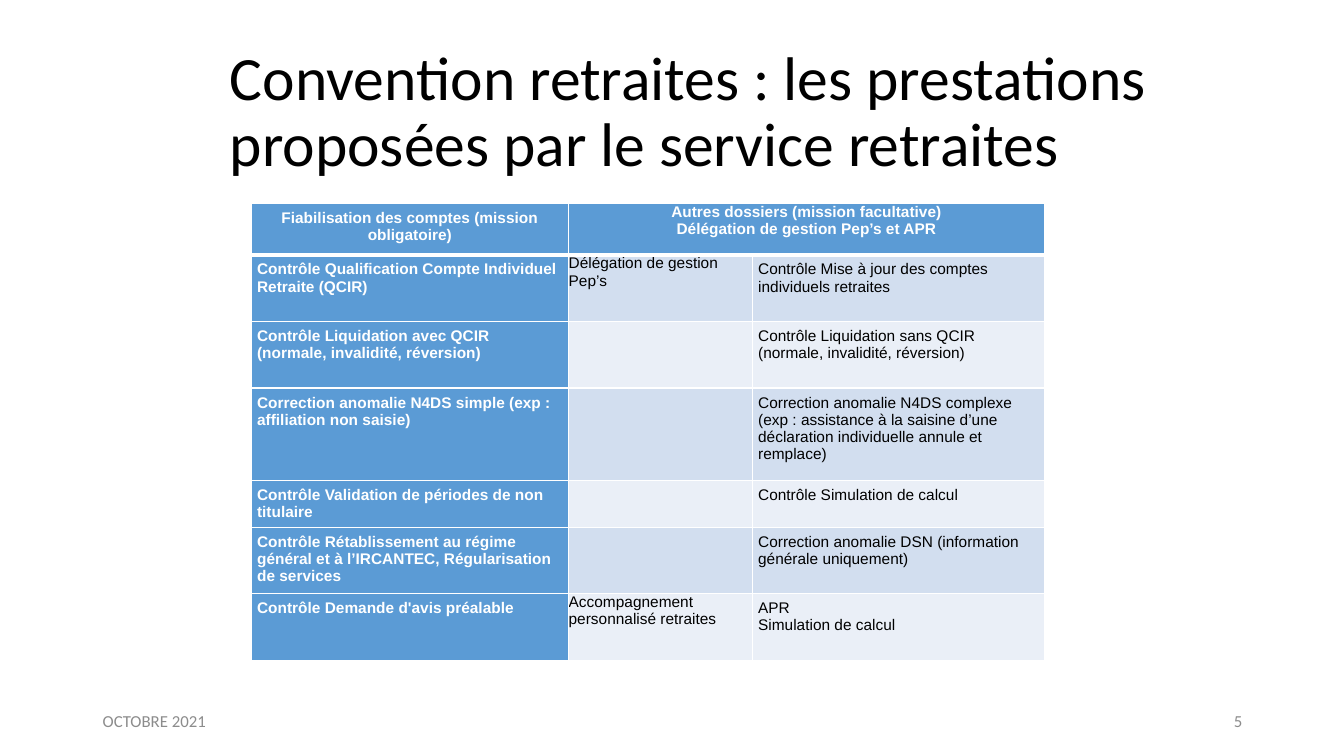
from lxml import etree
from pptx import Presentation
from pptx.dml.color import RGBColor
from pptx.enum.text import MSO_ANCHOR, MSO_AUTO_SIZE, PP_ALIGN
from pptx.oxml.ns import qn
from pptx.util import Inches, Pt

LEFT, CENTER, RIGHT = PP_ALIGN.LEFT, PP_ALIGN.CENTER, PP_ALIGN.RIGHT
TOP, MIDDLE = MSO_ANCHOR.TOP, MSO_ANCHOR.MIDDLE
NO_FIT = MSO_AUTO_SIZE.NONE

COLORS = {
    "text": "000000",
    "muted": "8C8C8C",
    "white": "FFFFFF",
    "header": "5B9BD5",
    "band_dark": "D2DEEF",
    "band_light": "EAEFF7",
}

TITLE = "Convention retraites : les prestations proposées par le service retraites"
TITLE_BOX = (2.18, 0.4, 10.24, 1.45)
TABLE_BOX = (2.49, 2.02, 7.87, 4.49)
FOOTER_BOX = (0.92, 6.95, 11.5, 0.4)

COLUMNS = [3.15, 1.82, 2.9]
ROWS = [0.51, 0.66, 0.66, 0.92, 0.41, 0.66, 0.66]
CELLS = [
    ("Fiabilisation des comptes (mission obligatoire)",
     "Autres dossiers (mission facultative)\nDélégation de gestion Pep’s et APR", ""),
    ("Contrôle Qualification Compte Individuel Retraite (QCIR)",
     "Délégation de gestion Pep’s",
     "Contrôle Mise à jour des comptes individuels retraites"),
    ("Contrôle Liquidation avec QCIR (normale, invalidité, réversion)", "",
     "Contrôle Liquidation sans QCIR (normale, invalidité, réversion)"),
    ("Correction anomalie N4DS simple (exp : affiliation non saisie)", "",
     "Correction anomalie N4DS complexe (exp : assistance à la saisine d’une "
     "déclaration individuelle annule et remplace)"),
    ("Contrôle Validation de périodes de non titulaire", "",
     "Contrôle Simulation de calcul"),
    ("Contrôle Rétablissement au régime général et à l’IRCANTEC, "
     "Régularisation de services", "",
     "Correction anomalie DSN (information générale uniquement)"),
    ("Contrôle Demande d'avis préalable", "Accompagnement personnalisé retraites",
     "APR\nSimulation de calcul"),
]


def write(tf, text, size=12, font="Calibri", color="text", bold=False,
          align=LEFT, spacing=1.0):
    for i, line in enumerate(text.split("\n")):
        p = tf.add_paragraph() if i else tf.paragraphs[0]
        p.alignment = align
        p.line_spacing = spacing
        r = p.add_run()
        r.text = line
        r.font.size = Pt(size)
        r.font.name = font
        r.font.bold = bold
        r.font.color.rgb = RGBColor.from_string(COLORS[color])


def set_borders(cell, **widths):
    tcPr = cell._tc.get_or_add_tcPr()
    for side in "LRTB":
        ln = etree.SubElement(tcPr, qn(f"a:ln{side}"), w=str(Pt(widths.get(side, 1))))
        fill = etree.SubElement(ln, qn("a:solidFill"))
        etree.SubElement(fill, qn("a:srgbClr"), val=COLORS["white"])


def add_title(s, box):
    sp = s.shapes.title
    sp.left, sp.top, sp.width, sp.height = map(Inches, box)
    tf = sp.text_frame
    tf.word_wrap = True
    tf.auto_size = NO_FIT
    tf.vertical_anchor = MIDDLE
    write(tf, TITLE, size=44, spacing=0.9)


def format_cell(cell, text, row, col):
    header = row == 0
    strong = header or col == 0
    set_borders(cell, T=3 if row == 1 else 1, B=3 if header else 1)
    band = "band_dark" if row % 2 else "band_light"
    cell.fill.solid()
    cell.fill.fore_color.rgb = RGBColor.from_string(COLORS["header" if strong else band])
    cell.vertical_anchor = TOP
    inset = Inches(0 if col == 1 else 0.06)
    cell.margin_left = cell.margin_right = inset
    cell.margin_top = cell.margin_bottom = inset
    if text:
        write(cell.text_frame, text, size=11, font="Arial", bold=strong,
              color="white" if strong else "text", align=CENTER if header else LEFT)


def add_services_table(s, box):
    x, y, w, h = map(Inches, box)
    table = s.shapes.add_table(len(ROWS), len(COLUMNS), x, y, w, h).table
    for column, width in zip(table.columns, COLUMNS):
        column.width = Inches(width)
    for table_row, height in zip(table.rows, ROWS):
        table_row.height = Inches(height)
    table.cell(0, 1).merge(table.cell(0, 2))
    for row, texts in enumerate(CELLS):
        for col, text in enumerate(texts):
            format_cell(table.cell(row, col), text, row, col)


def add_footer(s, box):
    x, y, w, h = box
    part = 3
    for left, text, align in ((x, "OCTOBRE 2021", LEFT), (x + w - part, "5", RIGHT)):
        sp = s.shapes.add_textbox(*map(Inches, (left, y, part, h)))
        tf = sp.text_frame
        tf.word_wrap = True
        tf.vertical_anchor = MIDDLE
        write(tf, text, color="muted", align=align)


def main():
    prs = Presentation()
    prs.slide_width, prs.slide_height = Inches(13.33), Inches(7.5)
    s = prs.slides.add_slide(prs.slide_layouts.get_by_name("Title Only"))
    add_title(s, TITLE_BOX)
    add_services_table(s, TABLE_BOX)
    add_footer(s, FOOTER_BOX)
    prs.save("out.pptx")


if __name__ == "__main__":
    main()
